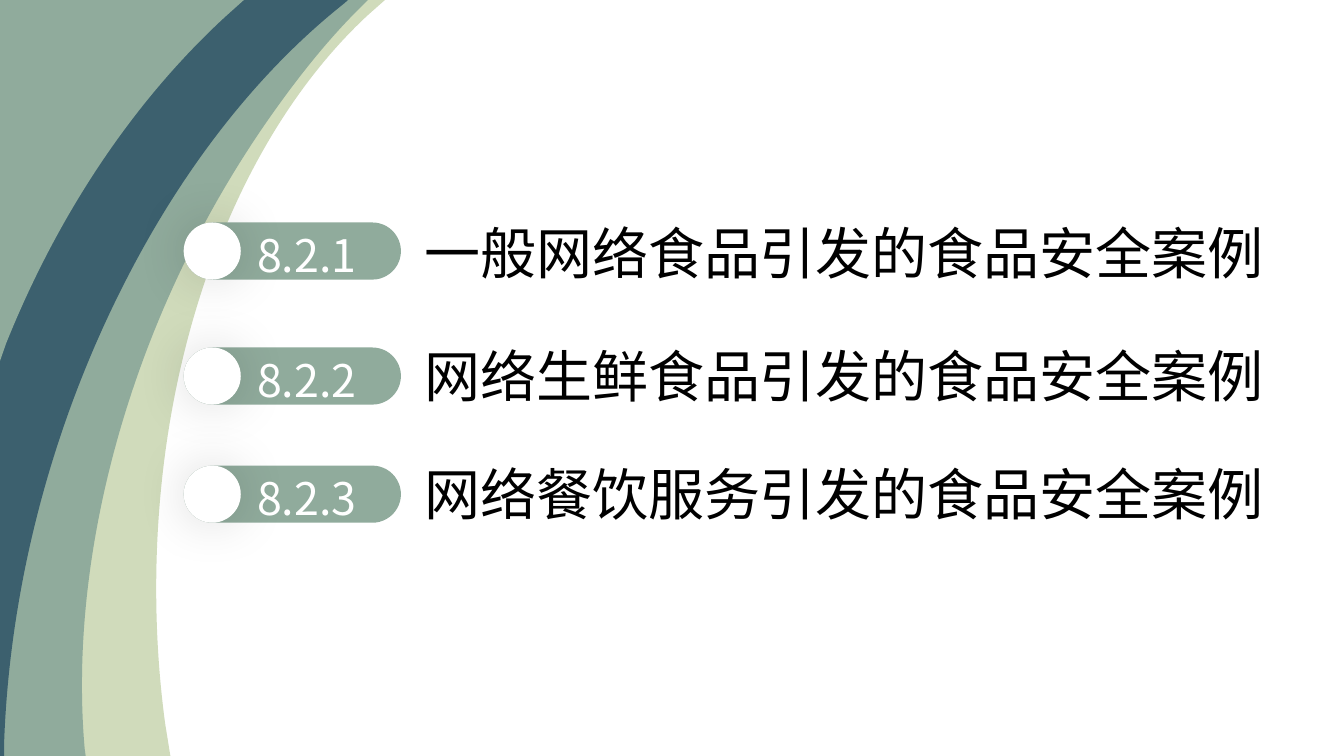
from lxml.etree import SubElement
from pptx import Presentation
from pptx.dml.color import RGBColor
from pptx.enum.shapes import MSO_SHAPE
from pptx.enum.text import MSO_ANCHOR, PP_ALIGN
from pptx.oxml.ns import qn
from pptx.util import Pt

COLORS = {"sage": "90AB9C", "lime": "D0DBBB", "teal": "3C606E",
          "white": "FFFFFF", "black": "000000"}
FONT = "Noto Sans CJK SC"
UNITS = 100  # freeform units per point


def paint(shape, color):
    """Give a shape a flat fill with no outline and no shadow."""
    shape.shadow.inherit = False
    shape.fill.solid()
    shape.fill.fore_color.rgb = RGBColor.from_string(COLORS[color])
    shape.line.fill.background()
    return shape


def add_text(shapes, text, left, top, width, height, *, size, color, align):
    box = shapes.add_textbox(Pt(left), Pt(top), Pt(width), Pt(height))
    frame = box.text_frame
    frame.word_wrap = True
    frame.vertical_anchor = MSO_ANCHOR.MIDDLE
    frame.margin_top = frame.margin_bottom = 0
    paragraph = frame.paragraphs[0]
    paragraph.alignment = align
    run = paragraph.add_run()
    run.text = text
    run.font.size = Pt(size)
    run.font.name = FONT
    run.font.color.rgb = RGBColor.from_string(COLORS[color])
    SubElement(run.font._element, qn("a:ea"), typeface=FONT)


presentation = Presentation()
presentation.slide_width, presentation.slide_height = Pt(960), Pt(540)
slide = presentation.slides.add_slide(presentation.slide_layouts[6])

# Straight corners of each band, then its curved side in Bezier triples
bands = [
    ("lime", [(121.7, 540), (0, 540), (0, 0), (275, 0), (262.8, 10.8)],
     [(172, 95), (111.6, 247), (111.6, 420.5),
      (111.6, 453.6), (113.8, 486), (118, 517)]),
    ("sage", [(61.2, 540), (0, 540), (0, 0), (262.8, 0), (252, 10.8)],
     [(231, 32.4), (211.7, 56.9), (193, 83.5),
      (94.3, 224), (48.2, 394.6), (60.5, 535)]),
    ("teal", [(2.9, 540), (0, 540), (0, 0), (248.5, 0), (246.2, 2.2)],
     [(188, 48.2), (134, 114.5), (90.7, 198.7),
      (35.3, 306), (6.5, 423.4), (2.9, 532)]),
    ("sage", [(0, 257.8), (0, 0), (174.2, 0), (160.6, 12.2)],
     [(95.8, 72), (41.8, 152), (4.3, 245.5)]),
]
band_shapes = slide.shapes.add_group_shape().shapes
for color, corners, curve in bands:
    start, *points = [(x * UNITS, y * UNITS) for x, y in corners + curve]
    builder = band_shapes.build_freeform(*start, scale=Pt(1) / UNITS)
    builder.add_line_segments(points)
    band = paint(builder.convert_to_shape(), color)
    curve_lines = list(band._element.iter(qn("a:lnTo")))[len(corners) - 1:][:len(curve)]
    for first in range(0, len(curve), 3):
        triple = curve_lines[first:first + 3]
        bezier = triple[0].makeelement(qn("a:cubicBezTo"))
        triple[0].addprevious(bezier)
        for line in triple:
            bezier.append(line[0])
            line.getparent().remove(line)

# Number, heading, pill top, heading top, heading width, heading alignment
sections = [
    ("8.2.1", "一般网络食品引发的食品安全案例", 158.9, 152.4, 624.5, PP_ALIGN.JUSTIFY),
    ("8.2.2", "网络生鲜食品引发的食品安全案例", 248.2, 239.9, 644.5, PP_ALIGN.JUSTIFY),
    ("8.2.3", "网络餐饮服务引发的食品安全案例", 332.6, 324.3, 624.5, None),
]
PILL_LEFT, PILL_WIDTH, PILL_HEIGHT = 131.2, 155.2, 40.8
for number, heading, pill_top, heading_top, heading_width, align in sections:
    shapes = slide.shapes.add_group_shape().shapes
    pill = paint(shapes.add_shape(MSO_SHAPE.ROUNDED_RECTANGLE, Pt(PILL_LEFT), Pt(pill_top),
                                  Pt(PILL_WIDTH), Pt(PILL_HEIGHT)), "sage")
    pill.adjustments[0] = 0.5
    knob = paint(shapes.add_shape(MSO_SHAPE.OVAL, Pt(PILL_LEFT), Pt(pill_top),
                                  Pt(PILL_HEIGHT), Pt(PILL_HEIGHT)), "white")
    effects = knob._element.spPr.find(qn("a:effectLst"))
    glow = SubElement(effects, qn("a:outerShdw"), blurRad=str(Pt(38)), dist="0",
                      dir="0", algn="ctr", rotWithShape="0")
    tint = SubElement(glow, qn("a:srgbClr"), val=COLORS["black"])
    SubElement(tint, qn("a:alpha"), val="14000")
    add_text(shapes, number, 167, pill_top - 0.2, 104.4, 46,
             size=32, color="white", align=PP_ALIGN.CENTER)
    add_text(shapes, heading, 296, heading_top, heading_width, 55.4,
             size=40, color="black", align=align)

presentation.save("out.pptx")
